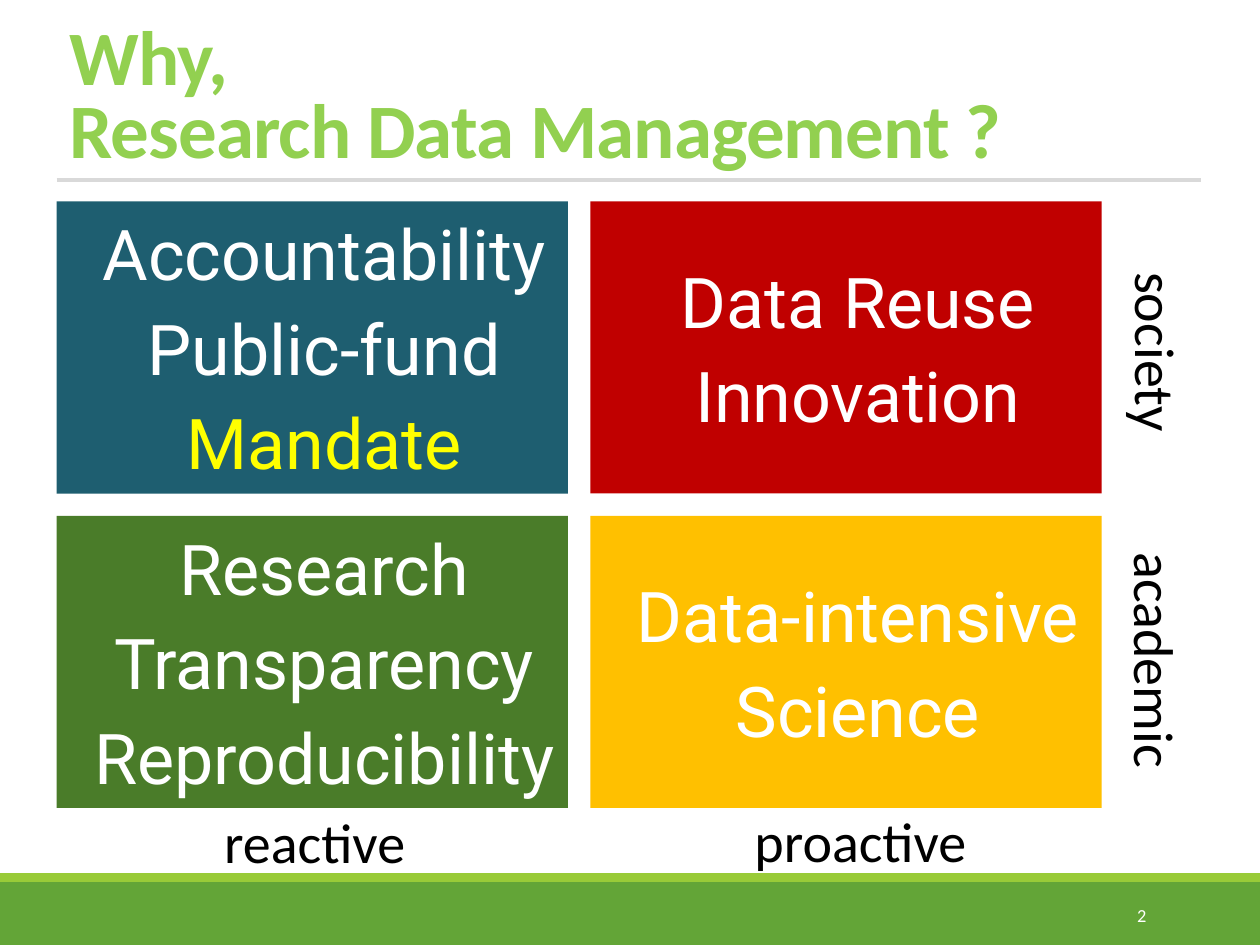
from pptx import Presentation
from pptx import util as u
from pptx.dml.color import RGBColor
from pptx.enum import shapes, text
from pptx.oxml.ns import qn
from lxml import etree

WHITE = RGBColor(0xFF, 0xFF, 0xFF)
BLACK = RGBColor(0, 0, 0)
YELLOW = RGBColor(0xFF, 0xFF, 0)
TITLE_GREEN = RGBColor(0x92, 0xD0, 0x50)
BAND_GREEN = RGBColor(0x63, 0xA5, 0x37)
STRIPE_GREEN = RGBColor(0x99, 0xCB, 0x38)
RULE_GREY = RGBColor(0xD9, 0xD9, 0xD9)
TEAL = RGBColor(0x1E, 0x5E, 0x70)
RED = RGBColor(0xC0, 0, 0)
GREEN = RGBColor(0x4A, 0x7C, 0x29)
AMBER = RGBColor(0xFF, 0xC0, 0)


class Deck:
    LABEL_FONT = "Calibri"
    CELL_FONT = "Roboto"

    def __init__(self, prs):
        self.s = prs.slides.add_slide(prs.slide_layouts[1])

    def place(self, sp, x, y, w, h):
        sp.left, sp.top, sp.width, sp.height = map(u.Cm, (x, y, w, h))

    def style(self, p, font, size, color):
        for r in p.runs:
            r.font.name, r.font.size = font, u.Pt(size)
            r.font.color.rgb = color

    def rect(self, x, y, w, h, color):
        sp = self.s.shapes.add_shape(shapes.MSO_SHAPE.RECTANGLE, *map(u.Cm, (x, y, w, h)))
        sp.shadow.inherit = False
        sp.fill.solid()
        sp.fill.fore_color.rgb = color
        sp.line.fill.background()
        return sp

    def rule(self, x1, x2, y, color):
        c = self.s.shapes.add_connector(
            shapes.MSO_CONNECTOR.STRAIGHT, *map(u.Cm, (x1, y, x2, y)))
        c.line.color.rgb = color
        c.line.width = u.Pt(2.25)
        etree.SubElement(c.element.spPr, qn("a:effectLst"))

    def title(self, words, x, y, w, h):
        sp = self.s.shapes.title
        self.place(sp, x, y, w, h)
        tf = sp.text_frame
        tf.text = words
        tf.auto_size = text.MSO_AUTO_SIZE.NONE
        tf.vertical_anchor = text.MSO_ANCHOR.BOTTOM
        p = tf.paragraphs[0]
        p.alignment, p.line_spacing = text.PP_ALIGN.LEFT, 0.8
        self.style(p, self.LABEL_FONT, 44, TITLE_GREEN)
        for r in p.runs:
            r.font.bold = True
            r.font._element.set("spc", "-50")

    def body(self, x, y, w, h, color):
        sp = self.s.placeholders[1]
        self.place(sp, x, y, w, h)
        sp.fill.solid()
        sp.fill.fore_color.rgb = color
        return sp

    def cell_text(self, sp, lines, highlight):
        tf = sp.text_frame
        tf.text = "\n".join(lines)
        tf.word_wrap = True
        tf.auto_size = text.MSO_AUTO_SIZE.NONE
        tf.vertical_anchor = text.MSO_ANCHOR.MIDDLE
        tf.margin_left = tf.margin_right = 0
        for p in tf.paragraphs:
            p.alignment, p.space_before = text.PP_ALIGN.CENTER, u.Pt(6)
            pPr = p._p.get_or_add_pPr()
            pPr.set("marL", str(u.Cm(0.48)))
            pPr.set("indent", "0")
            etree.SubElement(pPr, qn("a:buNone"))
            self.style(p, self.CELL_FONT, 40, YELLOW if p.text == highlight else WHITE)

    def label(self, words, x, y, w, h=1.63, size=32, color=BLACK, rotation=0):
        sp = self.s.shapes.add_textbox(*map(u.Cm, (x, y, w, h)))
        sp.rotation = rotation
        tf = sp.text_frame
        tf.text = words
        tf.word_wrap = False
        tf.auto_size = text.MSO_AUTO_SIZE.SHAPE_TO_FIT_TEXT
        self.style(tf.paragraphs[0], self.LABEL_FONT, size, color)
        return sp


def main():
    prs = Presentation()
    prs.slide_width, prs.slide_height = u.Cm(25.4), u.Cm(19.05)
    d = Deck(prs)

    # Footer bands and slide number
    d.rect(0, 17.78, 25.4, 1.27, BAND_GREEN)
    d.rect(0, 17.6, 25.4, 0.18, STRIPE_GREEN)
    tf = d.label("2", 20.62, 17.93, 2.74, 1.02, size=10.5, color=WHITE).text_frame
    tf.auto_size = text.MSO_AUTO_SIZE.NONE
    tf.word_wrap = True
    tf.vertical_anchor = text.MSO_ANCHOR.MIDDLE
    tf.paragraphs[0].alignment = text.PP_ALIGN.RIGHT

    # Title and rule
    left = 1.14
    d.title("Why,\vResearch Data Management ?", left, 0, 23.09, 3.63)
    d.rule(left, 24.21, 3.63, RULE_GREY)

    # Two-by-two matrix; the first cell is the body placeholder
    top, width, height, gap = 4.06, 10.31, 5.89, 0.45
    cells = [
        (TEAL, ["Accountability", "Public-fund", "Mandate"]),
        (RED, ["Data Reuse", "Innovation"]),
        (GREEN, ["Research", "Transparency", "Reproducibility"]),
        (AMBER, ["Data-intensive", "Science"]),
    ]
    for i, (color, lines) in enumerate(cells):
        row, col = divmod(i, 2)
        add = d.rect if i else d.body
        sp = add(left + col * (width + gap), top + row * (height + gap), width, height, color)
        d.cell_text(sp, lines, "Mandate")

    # Axis labels
    d.label("society", 21.44, 6.3, 3.76, rotation=90)
    d.label("academic", 20.85, 12.52, 4.9, rotation=90)
    d.label("reactive", 4.27, 16.15, 4.22)
    d.label("proactive", 14.96, 16.13, 4.83)

    prs.save("out.pptx")


if __name__ == "__main__":
    main()
